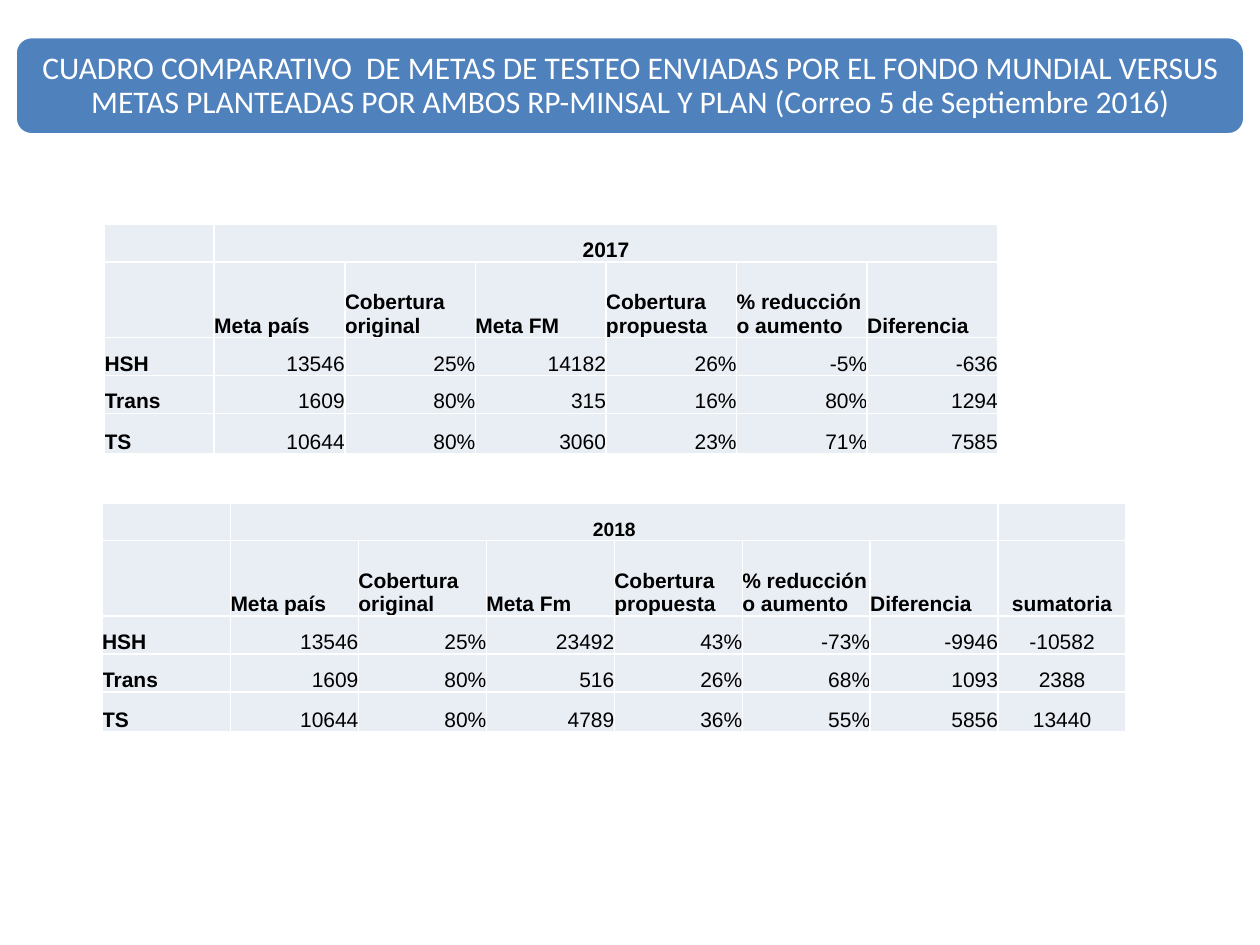
from dataclasses import dataclass

from lxml.etree import SubElement
from pptx import Presentation
from pptx.dml.color import RGBColor
from pptx.enum.shapes import MSO_SHAPE
from pptx.enum.text import MSO_ANCHOR as ANCHOR, PP_ALIGN as ALIGN
from pptx.oxml.ns import qn
from pptx.util import Inches, Pt

WHITE, BLACK, BLUE, PALE = "FFFFFF", "000000", "4F81BD", "E9EDF4"
TITLE = (
    "CUADRO COMPARATIVO  DE METAS DE TESTEO ENVIADAS POR EL FONDO MUNDIAL VERSUS "
    "METAS PLANTEADAS POR AMBOS RP-MINSAL Y PLAN (Correo 5 de Septiembre 2016)"
)
ROW_HEIGHTS = (0.3, 0.6, 0.3, 0.3, 0.32)
YEAR_SPAN = 6


@dataclass
class GoalTable:
    year: str
    year_size: int
    left: float
    top: float
    width: float
    label_width: float
    headers: list[str]
    rows: list[list[str]]


TABLES = [
    GoalTable(
        "2017", 12, 0.83, 1.78, 7.09, 0.87,
        ["Meta país", "Cobertura original", "Meta FM", "Cobertura propuesta",
         "% reducción o aumento", "Diferencia"],
        [["HSH", "13546", "25%", "14182", "26%", "-5%", "-636"],
         ["Trans", "1609", "80%", "315", "16%", "80%", "1294"],
         ["TS", "10644", "80%", "3060", "23%", "71%", "7585"]],
    ),
    GoalTable(
        "2018", 11, 0.81, 3.99, 8.13, 1.02,
        ["Meta país", "Cobertura original", "Meta Fm", "Cobertura propuesta",
         "% reducción o aumento", "Diferencia", "sumatoria"],
        [["HSH", "13546", "25%", "23492", "43%", "-73%", "-9946", "-10582"],
         ["Trans", "1609", "80%", "516", "26%", "68%", "1093", "2388"],
         ["TS", "10644", "80%", "4789", "36%", "55%", "5856", "13440"]],
    ),
]


def color(value: str) -> RGBColor:
    return RGBColor.from_string(value)


def style_font(p, name: str, size: int, ink: str, bold: bool = False) -> None:
    p.font.name = name
    p.font.size = Pt(size)
    p.font.bold = bold
    p.font.color.rgb = color(ink)


def set_margins(target, margin: float) -> None:
    target.margin_left = target.margin_right = Inches(margin)
    target.margin_top = target.margin_bottom = Inches(margin)


def add_borders(cell) -> None:
    props = cell._tc.get_or_add_tcPr()
    for position, side in enumerate(("lnL", "lnR", "lnT", "lnB")):
        line = SubElement(props, qn(f"a:{side}"), w=str(Pt(1)))
        fill = SubElement(line, qn("a:solidFill"))
        SubElement(fill, qn("a:srgbClr"), val=WHITE)
        props.insert(position, line)


def add_title(slide) -> None:
    group = slide.shapes.add_group_shape()
    sp = group.shapes.add_shape(
        MSO_SHAPE.ROUNDED_RECTANGLE, Inches(0.12), Inches(0.29), Inches(9.76), Inches(0.78)
    )
    sp.shadow.inherit = False
    sp.fill.solid()
    sp.fill.fore_color.rgb = color(BLUE)
    sp.line.color.rgb = color(WHITE)
    sp.line.width = Pt(2)
    box = group.shapes.add_textbox(Inches(0.16), Inches(0.33), Inches(9.69), Inches(0.71))
    tf = box.text_frame
    tf.word_wrap = True
    tf.vertical_anchor = ANCHOR.MIDDLE
    set_margins(tf, 0.07)
    p = tf.paragraphs[0]
    p.text = TITLE
    p.alignment = ALIGN.CENTER
    p.line_spacing = 0.9
    style_font(p, "Calibri", 18, WHITE)


def cell_alignment(row: int, col: int) -> ALIGN:
    if row == 0 or col > YEAR_SPAN:
        return ALIGN.CENTER
    return ALIGN.RIGHT if row > 1 and col > 0 else ALIGN.LEFT


def add_goal_table(slide, goals: GoalTable) -> None:
    count = len(goals.headers)
    year_row = ["", goals.year] + [""] * (count - 1)
    grid = [year_row, ["", *goals.headers], *goals.rows]
    table = slide.shapes.add_table(
        len(grid), count + 1, Inches(goals.left), Inches(goals.top),
        Inches(goals.width), Inches(sum(ROW_HEIGHTS)),
    ).table
    table.first_row = table.horz_banding = False
    value_width = (goals.width - goals.label_width) / count
    for col, column in enumerate(table.columns):
        column.width = Inches(value_width if col else goals.label_width)
    for row, height in zip(table.rows, ROW_HEIGHTS):
        row.height = Inches(height)
    for row, values in enumerate(grid):
        for col, value in enumerate(values):
            cell = table.cell(row, col)
            cell.fill.solid()
            cell.fill.fore_color.rgb = color(PALE)
            add_borders(cell)
            cell.vertical_anchor = ANCHOR.BOTTOM
            set_margins(cell, 0)
            p = cell.text_frame.paragraphs[0]
            p.text = value
            p.alignment = cell_alignment(row, col)
            size = 12 if row else goals.year_size
            style_font(p, "Arial", size, BLACK, row < 2 or col == 0)
    table.cell(0, 1).merge(table.cell(0, YEAR_SPAN))


def main() -> None:
    prs = Presentation()
    prs.slide_width, prs.slide_height = Inches(10), Inches(7.5)
    slide = prs.slides.add_slide(prs.slide_layouts[6])
    add_title(slide)
    for goals in TABLES:
        add_goal_table(slide, goals)
    prs.save("out.pptx")


if __name__ == "__main__":
    main()
